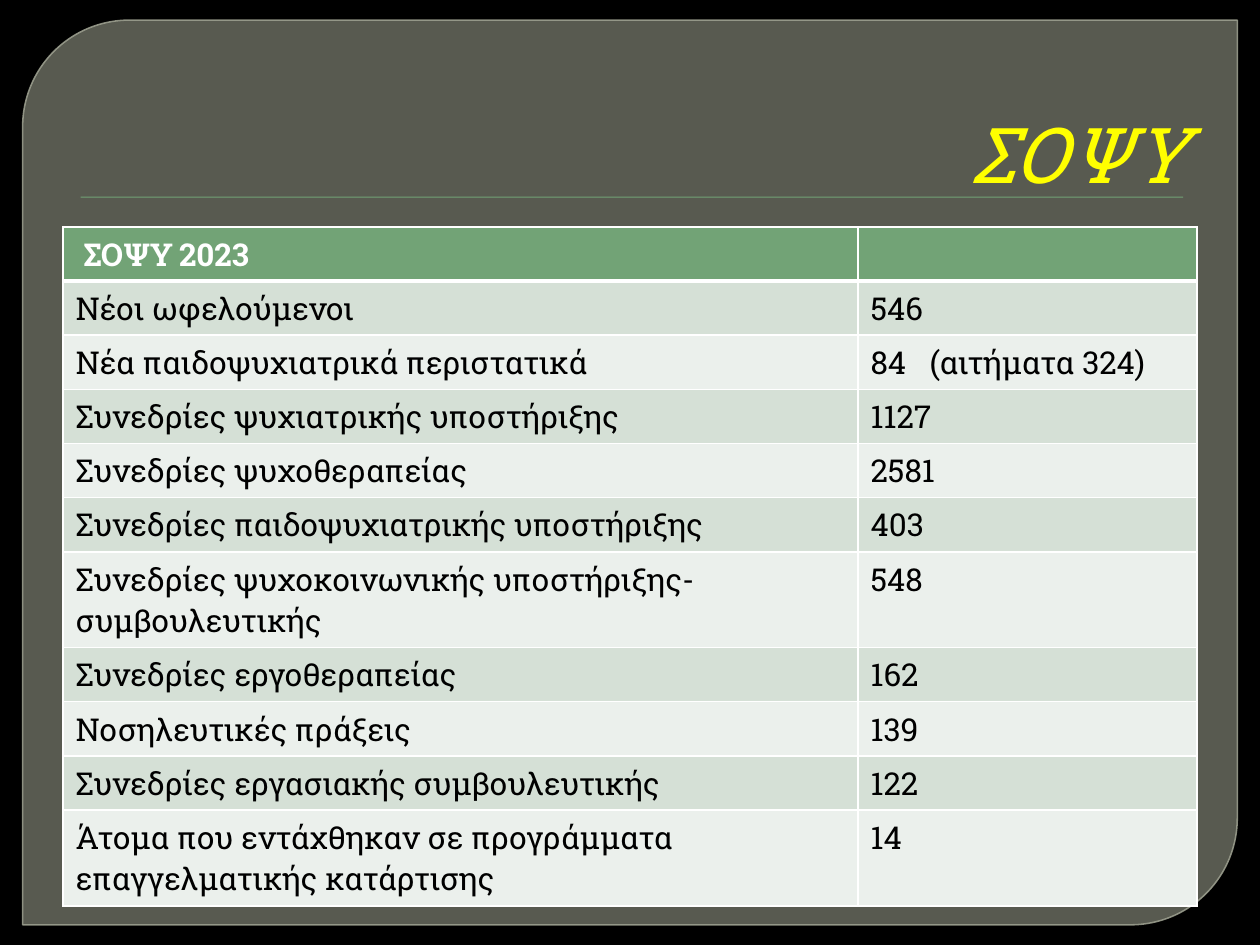
import pptx
import pptx.dml.color
import pptx.enum.shapes
import pptx.enum.text
import pptx.oxml
import pptx.oxml.ns
import pptx.util
from pptx.util import Inches

FONT = "Roboto Slab"
COLORS = {
    "background": "000000",
    "panel": "888B7B",
    "panel_line": "9DA090",
    "accent": "72A376",
    "title": "FFFF00",
    "odd_row": "D5E0D6",
    "even_row": "EBF0EC",
    "light": "FFFFFF",
    "dark": "000000",
}
ROWS = [
    (" ΣΟΨΥ 2023", ""),
    ("Νέοι ωφελούμενοι", "546"),
    ("Νέα παιδοψυχιατρικά περιστατικά", "84   (αιτήματα 324)"),
    ("Συνεδρίες ψυχιατρικής υποστήριξης", "1127"),
    ("Συνεδρίες ψυχοθεραπείας", "2581"),
    ("Συνεδρίες παιδοψυχιατρικής υποστήριξης", "403"),
    ("Συνεδρίες ψυχοκοινωνικής υποστήριξης- συμβουλευτικής", "548"),
    ("Συνεδρίες εργοθεραπείας", "162"),
    ("Νοσηλευτικές πράξεις", "139"),
    ("Συνεδρίες εργασιακής συμβουλευτικής", "122"),
    ("Άτομα που εντάχθηκαν σε προγράμματα επαγγελματικής κατάρτισης", "14"),
]
COLUMN_WIDTHS = (6.31, 2.69)
ROW_HEIGHT = 0.43
TWO_LINE_HEIGHT = 0.76
LINE_CAPACITY = 45


def rgb(name):
    return pptx.dml.color.RGBColor.from_string(COLORS[name])


def set_alpha(fill_parent, percent):
    color = fill_parent.find(".//" + pptx.oxml.ns.qn("a:srgbClr"))
    color.append(pptx.oxml.parse_xml(
        f'<a:alpha {pptx.oxml.ns.nsdecls("a")} val="{percent * 1000}"/>'))


def format_paragraph(paragraph, size, color, bold=False, italic=False):
    for run in paragraph.runs:
        run.font.name = FONT
        run.font.size = pptx.util.Pt(size)
        run.font.bold = bold
        run.font.italic = italic
        run.font.color.rgb = rgb(color)


def add_filled_shape(slide, kind, left, top, width, height, color):
    shape = slide.shapes.add_shape(
        kind, Inches(left), Inches(top), Inches(width), Inches(height))
    shape.shadow.inherit = False
    shape.fill.solid()
    shape.fill.fore_color.rgb = rgb(color)
    shape.line.fill.background()
    return shape


def add_panel(slide):
    kind = pptx.enum.shapes.MSO_SHAPE.ROUND_2_DIAG_RECTANGLE
    panel = add_filled_shape(slide, kind, 0.18, 0.16, 9.64, 7.18, "panel")
    panel.adjustments[0] = 0.118
    panel.adjustments[1] = 0
    set_alpha(panel.fill._xPr, 65)
    panel.line.color.rgb = rgb("panel_line")
    panel.line.width = pptx.util.Pt(0.87)
    set_alpha(panel.line._ln, 88)


def add_title(slide, text):
    title = slide.shapes.add_textbox(
        Inches(0.2), Inches(0.28), Inches(9.3), Inches(1.35))
    text_frame = title.text_frame
    text_frame.word_wrap = True
    text_frame.vertical_anchor = pptx.enum.text.MSO_ANCHOR.BOTTOM
    text_frame.text = text
    paragraph = text_frame.paragraphs[0]
    paragraph.alignment = pptx.enum.text.PP_ALIGN.RIGHT
    format_paragraph(paragraph, 44, "title", italic=True)


def set_borders(cell, widths):
    properties = cell._tc.get_or_add_tcPr()
    for position, (side, width) in enumerate(widths.items()):
        properties.insert(position, pptx.oxml.parse_xml(
            f'<a:{side} {pptx.oxml.ns.nsdecls("a")} w="{pptx.util.Pt(width)}">'
            f'<a:solidFill><a:srgbClr val="{COLORS["light"]}"/></a:solidFill>'
            f'</a:{side}>'))


def add_statistics_table(slide):
    heights = [TWO_LINE_HEIGHT if len(label) > LINE_CAPACITY else ROW_HEIGHT
               for label, value in ROWS]
    table = slide.shapes.add_table(
        len(ROWS), len(COLUMN_WIDTHS), Inches(0.5), Inches(1.8),
        Inches(sum(COLUMN_WIDTHS)), Inches(sum(heights))).table
    for column, width in zip(table.columns, COLUMN_WIDTHS):
        column.width = Inches(width)
    for row_index, values in enumerate(ROWS):
        table.rows[row_index].height = Inches(heights[row_index])
        header = row_index == 0
        band = "odd_row" if row_index % 2 else "even_row"
        for column_index, value in enumerate(values):
            cell = table.cell(row_index, column_index)
            cell.text_frame.text = value
            format_paragraph(cell.text_frame.paragraphs[0], 18,
                             "light" if header else "dark", bold=header)
            cell.fill.solid()
            cell.fill.fore_color.rgb = rgb("accent" if header else band)
            set_borders(cell, {"lnL": 1, "lnR": 1,
                               "lnT": 3 if row_index == 1 else 1,
                               "lnB": 3 if header else 1})


def main():
    presentation = pptx.Presentation()
    presentation.slide_width = Inches(10)
    presentation.slide_height = Inches(7.5)
    slide = presentation.slides.add_slide(presentation.slide_layouts[6])
    slide.background.fill.solid()
    slide.background.fill.fore_color.rgb = rgb("background")
    add_panel(slide)
    add_filled_shape(slide, pptx.enum.shapes.MSO_SHAPE.RECTANGLE,
                     0.64, 1.56, 8.75, 0.01, "accent")
    add_title(slide, "ΣΟΨΥ")
    add_statistics_table(slide)
    presentation.save("out.pptx")


if __name__ == "__main__":
    main()
